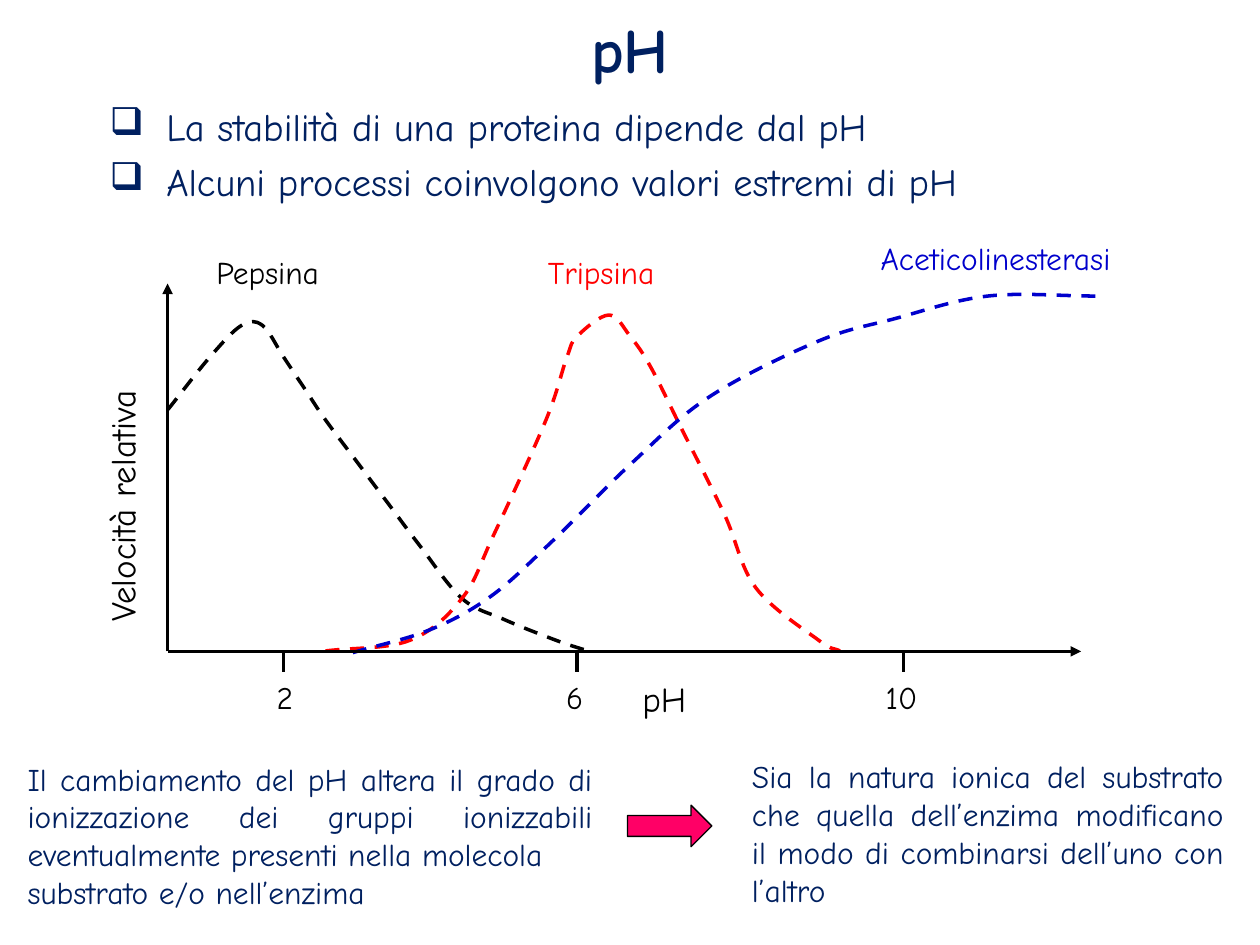
from lxml.etree import SubElement
from pptx import Presentation
from pptx.dml.color import RGBColor
from pptx.enum.dml import MSO_LINE
from pptx.enum.shapes import MSO_CONNECTOR, MSO_SHAPE
from pptx.enum.text import MSO_ANCHOR, MSO_AUTO_SIZE, PP_ALIGN
from pptx.oxml.ns import qn
from pptx.util import Inches, Pt

FONT = "Comic Neue"
NAVY = RGBColor(0x00, 0x20, 0x60)
BLACK = RGBColor(0x00, 0x00, 0x00)
RED = RGBColor(0xFF, 0x00, 0x00)
BLUE = RGBColor(0x00, 0x00, 0xCC)
PINK = RGBColor(0xFF, 0x00, 0x66)

TITLE_SIZE, BODY_SIZE, AXIS_SIZE, NOTE_SIZE = 36, 22, 20, 18
LABEL_HEIGHT = 0.4
AXIS_TITLE_HEIGHT = 0.43
HANGING = Inches(0.45)

ORIGIN_X, ORIGIN_Y = 1.33, 5.17
AXIS_TOP, AXIS_RIGHT = 2.25, 8.58
TICK_BOTTOM = 5.33
GRID = 1 / 12

PEPSINA = [(16, 39), (20, 34), (23, 31), (25, 31), (27, 34), (29, 37), (31, 40),
           (34, 44), (37, 48), (40, 52), (44, 57), (48, 59), (53, 61), (56, 62)]
TRIPSINA = [(31, 62), (39, 61), (44, 57), (47, 51), (52, 40), (54, 34), (55, 32), (58, 30),
            (60, 32), (62, 35), (65, 41), (69, 49), (72, 56), (78, 61), (80, 62)]
ACETICOLINESTERASI = [(2.8, 5.18), (3.41, 5), (3.9, 4.73), (4.39, 4.29), (5.01, 3.68),
                      (5.63, 3.15), (6.49, 2.71), (7.1, 2.53), (7.84, 2.35), (8.7, 2.35)]


def add_bullet(p, char):
    pPr = p._p.get_or_add_pPr()
    pPr.set("marL", str(HANGING))
    pPr.set("indent", str(-HANGING))
    SubElement(pPr, qn("a:buChar")).set("char", char)


def add_text(s, box, paragraphs, size, color, align=PP_ALIGN.LEFT, wrap=True,
             bold=False, bullet=None, space=0, fit=True):
    sp = s.shapes.add_textbox(*map(Inches, box))
    tf = sp.text_frame
    tf.word_wrap = wrap
    tf.auto_size = MSO_AUTO_SIZE.SHAPE_TO_FIT_TEXT if fit else MSO_AUTO_SIZE.NONE
    for i, text in enumerate(paragraphs):
        p = tf.add_paragraph() if i else tf.paragraphs[0]
        p.alignment = align
        if i and space:
            p.space_before = Pt(space)
        if bullet:
            add_bullet(p, bullet)
        r = p.add_run()
        r.text = text
        r.font.name = FONT
        r.font.size = Pt(size)
        r.font.bold = bold
        r.font.color.rgb = color
    return sp


def add_line(s, x1, y1, x2, y2, arrow=False):
    line = s.shapes.add_connector(MSO_CONNECTOR.STRAIGHT, *map(Inches, (x1, y1, x2, y2)))
    line.line.color.rgb = BLACK
    line.line.width = Pt(2)
    if arrow:
        SubElement(line.line._get_or_add_ln(), qn("a:tailEnd")).set("type", "triangle")
    SubElement(line._element.spPr, qn("a:effectLst"))


def shift(point, start, end, factor):
    return tuple(c + (b - a) * factor for c, a, b in zip(point, start, end))


def bezier_points(knots):
    before_first = shift(knots[0], knots[1], knots[0], 1)
    after_last = shift(knots[-1], knots[-2], knots[-1], 1)
    padded = [before_first, *knots, after_last]
    points = []
    for previous, start, end, following in zip(padded, padded[1:], padded[2:], padded[3:]):
        points += [shift(start, previous, end, 1 / 6), shift(end, start, following, -1 / 6), end]
    return points


def add_curve(s, knots, unit, color):
    knots = [(Inches(x * unit), Inches(y * unit)) for x, y in knots]
    builder = s.shapes.build_freeform(*knots[0])
    builder.add_line_segments(bezier_points(knots), close=False)
    sp = builder.convert_to_shape()
    path = sp._element.find(".//" + qn("a:path"))
    segments = path.findall(qn("a:lnTo"))
    for i in range(0, len(segments), 3):
        bezier = SubElement(path, qn("a:cubicBezTo"))
        for segment in segments[i:i + 3]:
            bezier.append(segment[0])
            path.remove(segment)
    sp.fill.background()
    sp.line.color.rgb = color
    sp.line.width = Pt(2)
    sp.line.dash_style = MSO_LINE.DASH
    sp.shadow.inherit = False


def add_arrow(s, box):
    sp = s.shapes.add_shape(MSO_SHAPE.DOWN_ARROW, *map(Inches, box))
    sp.rotation = 270
    sp.fill.solid()
    sp.fill.fore_color.rgb = PINK
    sp.line.color.rgb = BLACK
    sp.line.width = Pt(0.75)
    sp.shadow.inherit = False


def add_axes(s):
    for x, y in ((ORIGIN_X, AXIS_TOP), (AXIS_RIGHT, ORIGIN_Y)):
        add_line(s, ORIGIN_X, ORIGIN_Y, x, y, arrow=True)
    for text, left, top, width, rotation in (("Velocità relativa", -0.24, 3.61, 2.41, 270),
                                             ("pH", 5, TICK_BOTTOM, 0.56, 0)):
        axis_title = add_text(s, (left, top, width, AXIS_TITLE_HEIGHT), [text],
                              AXIS_SIZE, BLACK, wrap=False)
        axis_title.rotation = rotation
    for label, x, left, width in (("2", 2.25, 2.05, 0.42),
                                  ("6", 4.58, 4.35, 0.42),
                                  ("10", 7.17, 6.87, 0.57)):
        add_line(s, x, ORIGIN_Y, x, TICK_BOTTOM)
        add_text(s, (left, TICK_BOTTOM, width, LABEL_HEIGHT), [label],
                 NOTE_SIZE, BLACK, PP_ALIGN.CENTER)


def add_enzymes(s):
    enzymes = (("Pepsina", PEPSINA, GRID, BLACK, 1.5, 1.96, 1.25, PP_ALIGN.CENTER, True),
               ("Tripsina", TRIPSINA, GRID, RED, 4.25, 1.96, 1.14, PP_ALIGN.LEFT, False),
               ("Aceticolinesterasi", ACETICOLINESTERASI, 1, BLUE,
                6.89, 1.85, 2.39, PP_ALIGN.LEFT, False))
    for name, knots, unit, color, left, top, width, align, wrap in enzymes:
        add_curve(s, knots, unit, color)
        add_text(s, (left, top, width, LABEL_HEIGHT), [name], NOTE_SIZE, color, align, wrap)


def add_heading(s):
    title = add_text(s, (0, 0, 10, 0.76), ["pH"], TITLE_SIZE, NAVY, PP_ALIGN.CENTER,
                     bold=True, fit=False)
    title.text_frame.vertical_anchor = MSO_ANCHOR.MIDDLE
    body = add_text(s, (0.75, 0.76, 8.5, 0.86),
                    ["La stabilità di una proteina dipende dal pH",
                     "Alcuni processi coinvolgono valori estremi di pH"],
                    BODY_SIZE, NAVY, bullet="❑", space=5, fit=False)
    for sp in (title, body):
        tf = sp.text_frame
        tf.margin_left = tf.margin_right = Inches(0.12)
        tf.margin_top = tf.margin_bottom = Inches(0.06)


def add_conclusion(s):
    cause = ["Il cambiamento del pH altera il grado di ionizzazione dei gruppi "
             "ionizzabili eventualmente presenti nella molecola",
             "substrato e/o nell’enzima"]
    effect = ["Sia la natura ionica del substrato che quella dell’enzima modificano "
              "il modo di combinarsi dell’uno con l’altro"]
    for box, paragraphs in (((0.12, 5.98, 4.68, 1.31), cause),
                            ((5.87, 5.96, 3.94, 1.31), effect)):
        add_text(s, box, paragraphs, NOTE_SIZE, NAVY, PP_ALIGN.JUSTIFY)
    add_arrow(s, (5.15, 6.22, 0.33, 0.67))


def main():
    prs = Presentation()
    prs.slide_width = Inches(10)
    prs.slide_height = Inches(7.5)
    s = prs.slides.add_slide(prs.slide_layouts[6])
    add_heading(s)
    add_enzymes(s)
    add_axes(s)
    add_conclusion(s)
    prs.save("out.pptx")


if __name__ == "__main__":
    main()
